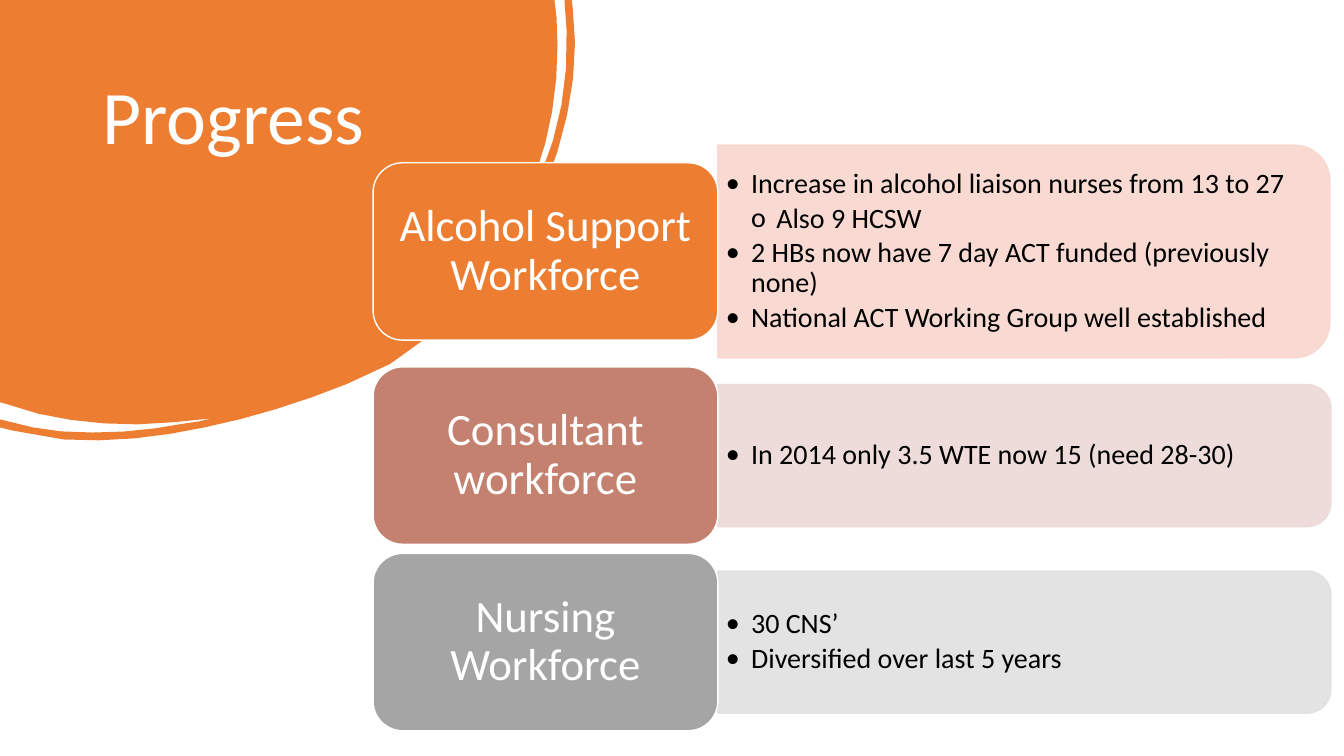
from math import dist

from lxml import etree
from pptx import Presentation
from pptx.dml.color import RGBColor
from pptx.enum.shapes import MSO_SHAPE
from pptx.enum.text import MSO_ANCHOR, PP_ALIGN
from pptx.oxml.ns import qn
from pptx.util import Inches, Pt

LEFT, CENTER = PP_ALIGN.LEFT, PP_ALIGN.CENTER
TOP, MIDDLE = MSO_ANCHOR.TOP, MSO_ANCHOR.MIDDLE
ROUND_RECT, ROUND_TOP = MSO_SHAPE.ROUNDED_RECTANGLE, MSO_SHAPE.ROUND_2_SAME_RECTANGLE

FONT = "Calibri"
WHITE, BLACK = RGBColor(0xFF, 0xFF, 0xFF), RGBColor(0, 0, 0)
ORANGE, PEACH = RGBColor(0xED, 0x7D, 0x31), RGBColor(0xF8, 0xD7, 0xCE)
ROSE, PALE_ROSE = RGBColor(0xC4, 0x81, 0x70), RGBColor(0xED, 0xD9, 0xD7)
GRAY, PALE_GRAY = RGBColor(0xA5, 0xA5, 0xA5), RGBColor(0xE1, 0xE1, 0xE1)

# Row layout, in inches
ROWS_LEFT, ROWS_TOP, ROW_GAP = 3.7, 1.44, 0.09
LABEL_W, LABEL_H = 3.42, 1.76

# Label, label colour, panel colour, panel width and height, (level, bullet text)
ROWS = [
    ("Alcohol Support Workforce", ORANGE, PEACH, 6.07, 2.11, [
        (1, "Increase in alcohol liaison nurses from 13 to 27"),
        (2, "Also 9 HCSW"),
        (1, "2 HBs now have 7 day ACT funded (previously none)"),
        (1, "National ACT Working Group well established")]),
    ("Consultant workforce", ROSE, PALE_ROSE, 6.08, 1.41, [
        (1, "In 2014 only 3.5 WTE now 15 (need 28-30)")]),
    ("Nursing Workforce", GRAY, PALE_GRAY, 6.08, 1.41, [
        (1, "30 CNS’"),
        (1, "Diversified over last 5 years")]),
]
BULLETS = {1: "•", 2: "o"}

# Blob outline: two numbers draw a line, six a Bézier curve
BLOB = [
    (5.5, 0), (5.52, 0.17), (5.53, 0.26, 5.53, 0.36, 5.53, 0.45),
    (5.53, 1.01, 5.42, 1.54, 5.18, 2.04), (4.96, 2.49, 4.65, 2.88, 4.27, 3.21),
    (4.29, 3.21, 4.3, 3.19, 4.32, 3.18), (4.59, 2.95, 4.82, 2.69, 5.01, 2.39),
    (5.43, 1.76, 5.65, 1.07, 5.62, 0.3), (5.62, 0.21, 5.61, 0.12, 5.6, 0.03),
    (5.6, 0), (5.67, 0), (5.68, 0.07), (5.74, 0.54, 5.68, 1.02, 5.53, 1.5),
    (5.33, 2.14, 4.97, 2.68, 4.48, 3.14), (4.39, 3.23, 4.29, 3.31, 4.19, 3.38),
    (4.09, 3.46, 3.99, 3.53, 3.87, 3.61), (3.75, 3.69, 3.6, 3.75, 3.44, 3.81),
    (2.99, 3.99, 2.52, 4.14, 2.03, 4.24), (1.57, 4.34, 1.1, 4.39, 0.63, 4.36),
    (0.45, 4.34, 0.28, 4.32, 0.12, 4.27), (0, 4.24), (0, 4.16), (0.04, 4.17),
    (0.23, 4.23, 0.42, 4.26, 0.61, 4.28), (1.03, 4.31, 1.43, 4.28, 1.84, 4.2),
    (1.89, 4.2, 1.93, 4.19, 1.98, 4.18), (2.02, 4.17, 2.06, 4.16, 2.1, 4.15),
    (1.86, 4.18, 1.61, 4.2, 1.36, 4.21), (0.92, 4.21, 0.48, 4.16, 0.07, 4.01),
    (0, 3.99),
]
CHORD = 0.35  # length of the straight pieces of a curve, in inches


def write(sp, paragraphs, size, color, align=LEFT, anchor=MIDDLE,
          insets=(0.1, 0.05), after=0):
    """Fill a shape with (level, text) paragraphs; level 0 has no bullet."""
    tf = sp.text_frame
    tf.word_wrap = True
    tf.vertical_anchor = anchor
    tf.margin_left = tf.margin_right = Inches(insets[0])
    tf.margin_top = tf.margin_bottom = Inches(insets[1])
    for i, (level, text) in enumerate(paragraphs):
        p = tf.add_paragraph() if i else tf.paragraphs[0]
        p.alignment, p.line_spacing, p.space_after = align, 0.9, Pt(after)
        r = p.add_run()
        r.text = text
        r.font.name, r.font.size, r.font.color.rgb = FONT, Pt(size), color
        if level:
            p.level = level
            pPr = p._p.get_or_add_pPr()
            pPr.set("marL", str(Inches(0.25 * level)))
            pPr.set("indent", str(Inches(-0.25)))
            etree.SubElement(pPr, qn("a:buFont"), typeface=FONT)
            etree.SubElement(pPr, qn("a:buChar"), char=BULLETS[level])


def add_shape(s, kind, x, y, w, h, fill, line, alpha=None):
    sp = s.shapes.add_shape(kind, Inches(x), Inches(y), Inches(w), Inches(h))
    sp.shadow.inherit = False
    sp.fill.solid()
    sp.fill.fore_color.rgb = fill
    sp.line.color.rgb = line
    sp.line.width = Pt(1)
    if alpha:
        for clr in sp._element.spPr.iter(qn("a:srgbClr")):
            etree.SubElement(clr, qn("a:alpha"), val=str(alpha * 1000))
    return sp


def add_text(s, x, y, w, h, paragraphs, size, color, **fmt):
    sp = s.shapes.add_textbox(Inches(x), Inches(y), Inches(w), Inches(h))
    write(sp, paragraphs, size, color, **fmt)


def outline(segments, start=(0, 0)):
    """Turn lines and Bézier curves into points, more of them on long curves."""
    points, here = [], start
    for seg in segments:
        end = seg[-2:]
        if len(seg) == 6:
            ctrl = (here, seg[:2], seg[2:4], end)
            steps = max(1, round(dist(here, end) / CHORD))
            for step in range(1, steps + 1):
                t = step / steps
                u = 1 - t
                weights = (u ** 3, 3 * u * u * t, 3 * u * t * t, t ** 3)
                points.append(tuple(sum(k * c[axis] for k, c in zip(weights, ctrl))
                                    for axis in (0, 1)))
        else:
            points.append(end)
        here = end
    return points


def add_title_blob(s, x, y):
    fb = s.shapes.build_freeform(0, 0, scale=Inches(1) / 1000)
    fb.add_line_segments([(px * 1000, py * 1000) for px, py in outline(BLOB)])
    sp = fb.convert_to_shape(Inches(x), Inches(y))
    sp.shadow.inherit = False
    sp.fill.solid()
    sp.fill.fore_color.rgb = ORANGE
    sp.line.fill.background()
    add_text(s, x + 0.92, y + 0.74, 3.52, 2.22, [(0, "Progress")], 54, WHITE, anchor=TOP)


def add_row(s, x, y, label, color, tint, w, h, bullets):
    """Draw a label with its panel and return the row height."""
    row_h = max(h, LABEL_H)
    mid = y + row_h / 2
    panel_x, panel_y = x + LABEL_W, mid - h / 2
    # Panel: a shape with a rounded top, turned to the right
    sp = add_shape(s, ROUND_TOP, panel_x + (w - h) / 2, mid - w / 2, h, w, tint, tint, 90)
    sp.rotation = 90
    add_text(s, panel_x, panel_y + 0.05 * h, w - 0.05 * h, 0.9 * h, bullets, 20, BLACK,
             insets=(0.08, 0.04), after=3)
    # Label
    sp = add_shape(s, ROUND_RECT, x, mid - LABEL_H / 2, LABEL_W, LABEL_H, color, WHITE)
    write(sp, [(0, label)], 32, WHITE, align=CENTER, insets=(0.13, 0.07))
    return row_h


def main():
    prs = Presentation()
    prs.slide_width, prs.slide_height = Inches(13.33), Inches(7.5)
    s = prs.slides.add_slide(prs.slide_layouts[6])
    add_title_blob(s, 0, 0)
    y = ROWS_TOP
    for row in ROWS:
        y += add_row(s, ROWS_LEFT, y, *row) + ROW_GAP
    prs.save("out.pptx")


if __name__ == "__main__":
    main()
